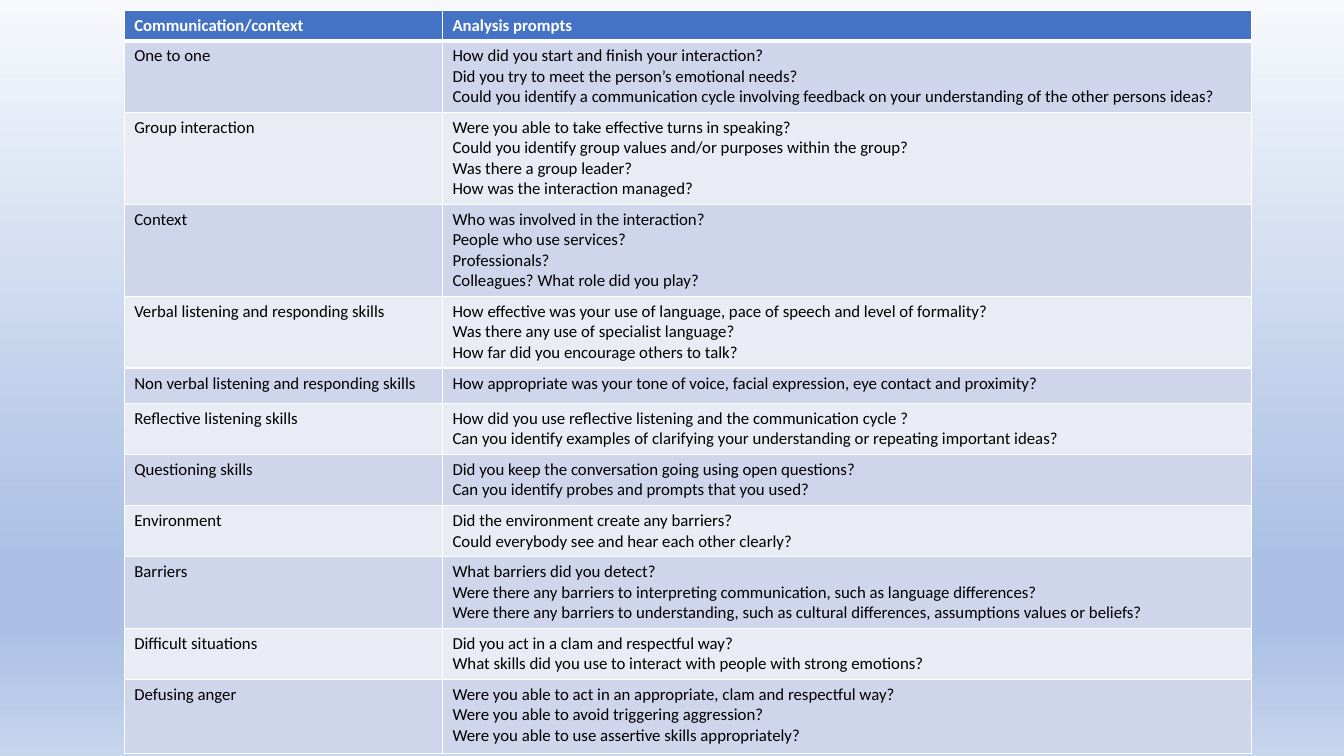
from lxml.etree import SubElement
from pptx import Presentation
from pptx.dml.color import RGBColor
from pptx.oxml import parse_xml
from pptx.oxml.ns import nsdecls, qn
from pptx.util import Cm, Pt

COLORS = {
    "header": "4472C4",
    "odd": "CFD5EA",
    "even": "E9EBF5",
    "white": "FFFFFF",
    "black": "000000",
    "bg_top": "F6F8FC",
    "bg_band": "ABC0E4",
    "bg_bottom": "C7D5ED",
}
BG_STOPS = [(0, "bg_top"), (74, "bg_band"), (83, "bg_band"), (100, "bg_bottom")]
COL_WIDTHS = [8.02, 20.4]
ROWS = [
    (0.76, "Communication/context", ["Analysis prompts"]),
    (1.78, "One to one", [
        "How did you start and finish your interaction?",
        "Did you try to meet the person’s emotional needs?",
        "Could you identify a communication cycle involving feedback on your "
        "understanding of the other persons ideas?"]),
    (2.26, "Group interaction", [
        "Were you able to take effective turns in speaking?",
        "Could you identify group values and/or purposes within the group?",
        "Was there a group leader?",
        "How was the interaction managed?"]),
    (2.26, "Context", [
        "Who was involved in the interaction?",
        "People who use services?",
        "Professionals?",
        "Colleagues? What role did you play?"]),
    (1.73, "Verbal listening and responding skills", [
        "How effective was your use of language, pace of speech and level of formality?",
        "Was there any use of specialist language?",
        "How far did you encourage others to talk?"]),
    (0.89, "Non verbal listening and responding skills", [
        "How appropriate was your tone of voice, facial expression, eye contact and proximity?"]),
    (1.27, "Reflective listening skills", [
        "How did you use reflective listening and the communication cycle ?",
        "Can you identify examples of clarifying your understanding or repeating important ideas?"]),
    (1.27, "Questioning skills", [
        "Did you keep the conversation going using open questions?",
        "Can you identify probes and prompts that you used?"]),
    (1.27, "Environment", [
        "Did the environment create any barriers?",
        "Could everybody see and hear each other clearly?"]),
    (1.78, "Barriers", [
        "What barriers did you detect?",
        "Were there any barriers to interpreting communication, such as language differences?",
        "Were there any barriers to understanding, such as cultural differences, "
        "assumptions values or beliefs?"]),
    (1.24, "Difficult situations", [
        "Did you act in a clam and respectful way?",
        "What skills did you use to interact with people with strong emotions?"]),
    (1.88, "Defusing anger", [
        "Were you able to act in an appropriate, clam and respectful way?",
        "Were you able to avoid triggering aggression?",
        "Were you able to use assertive skills appropriately?"]),
]


def rgb(name):
    """Return the named colour."""
    return RGBColor.from_string(COLORS[name])


def set_background(s):
    """Fill the slide background with the vertical blue gradient."""
    fill = s.background.fill
    fill.gradient()
    fill.gradient_angle = 270
    stops = s.element.find(".//" + qn("a:gsLst"))
    for gs in list(stops):
        stops.remove(gs)
    for percent, name in BG_STOPS:
        gs = SubElement(stops, qn("a:gs"), pos=str(percent * 1000))
        SubElement(gs, qn("a:srgbClr"), val=COLORS[name])


def set_borders(cell, top, bottom):
    """Draw white cell borders, with the top and bottom widths in points."""
    tc_pr = cell._tc.get_or_add_tcPr()
    for i, (side, width) in enumerate([("L", 1), ("R", 1), ("T", top), ("B", bottom)]):
        tc_pr.insert(i, parse_xml(
            f'<a:ln{side} {nsdecls("a")} w="{Pt(width)}"><a:solidFill>'
            f'<a:srgbClr val="{COLORS["white"]}"/></a:solidFill></a:ln{side}>'))


def fill_cell(cell, lines, row):
    """Write the lines into a cell and style it for its row."""
    header = row == 0
    cell.fill.solid()
    cell.fill.fore_color.rgb = rgb("header" if header else "odd" if row % 2 else "even")
    set_borders(cell, 3 if row == 1 else 1, 3 if header else 1)
    tf = cell.text_frame
    tf.text = "\n".join(lines)
    for p in tf.paragraphs:
        p.font.name = "Calibri"
        p.font.size = Pt(12)
        p.font.bold = header
        p.font.color.rgb = rgb("white" if header else "black")


def add_prompts_table(s):
    """Add the table of communication contexts and analysis prompts."""
    heights = [height for height, _, _ in ROWS]
    table = s.shapes.add_table(
        len(ROWS), len(COL_WIDTHS), Cm(3.13), Cm(0.26),
        Cm(sum(COL_WIDTHS)), Cm(sum(heights))).table
    for column, width in zip(table.columns, COL_WIDTHS):
        column.width = Cm(width)
    for i, (height, context, prompts) in enumerate(ROWS):
        table.rows[i].height = Cm(height)
        fill_cell(table.cell(i, 0), [context], i)
        fill_cell(table.cell(i, 1), prompts, i)


def main():
    """Build the slide and save it."""
    prs = Presentation()
    prs.slide_width = Cm(33.87)
    prs.slide_height = Cm(19.05)
    s = prs.slides.add_slide(prs.slide_layouts[6])
    set_background(s)
    add_prompts_table(s)
    prs.save("out.pptx")


if __name__ == "__main__":
    main()
